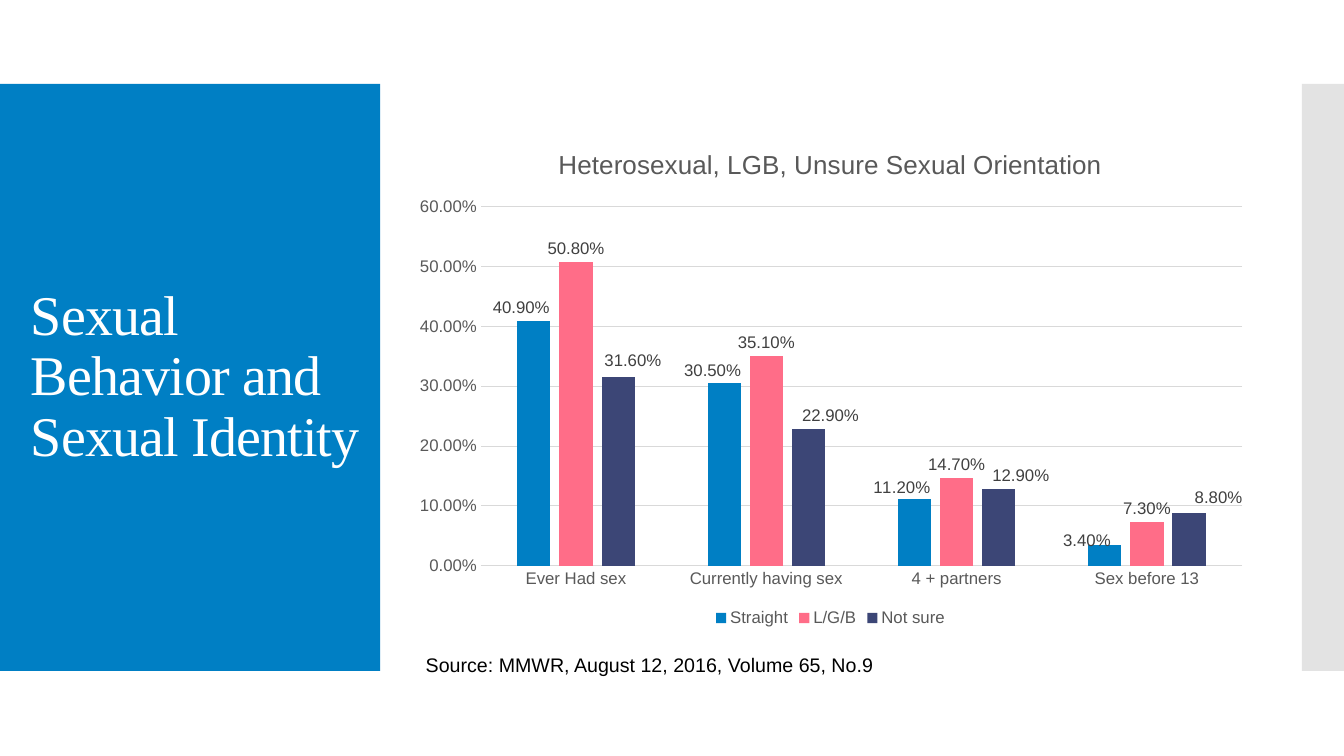
from dataclasses import dataclass

from lxml.etree import SubElement
from pptx import Presentation
from pptx.chart.data import CategoryChartData
from pptx.dml.color import RGBColor
from pptx.enum.chart import XL_CHART_TYPE as ChartType
from pptx.enum.chart import XL_LABEL_POSITION as LabelPosition
from pptx.enum.chart import XL_LEGEND_POSITION as LegendPosition
from pptx.enum.chart import XL_TICK_MARK as TickMark
from pptx.enum.shapes import MSO_SHAPE as Shape
from pptx.enum.text import MSO_ANCHOR as Anchor
from pptx.enum.text import MSO_AUTO_SIZE as AutoSize
from pptx.oxml import parse_xml
from pptx.oxml.ns import nsdecls, qn
from pptx.util import Pt

EMU_PER_PX = 9525  # 96 px to the inch


@dataclass(frozen=True)
class Theme:
    blue: str = "007FC4"
    pink: str = "FF6D88"
    navy: str = "3C4676"
    band: str = "C8C8C8"
    white: str = "FFFFFF"
    black: str = "000000"
    axis_text: str = "595959"
    label_text: str = "404040"
    grid: str = "D9D9D9"
    serif: str = "Times New Roman"
    sans: str = "Arial"
    title_size: float = 40
    chart_title_size: float = 18.6
    source_size: float = 14
    chart_size: float = 12


class SlideBuilder:
    def __init__(self, page, theme):
        self.page = page
        self.theme = theme

    def px(self, *lengths):
        return [length * EMU_PER_PX for length in lengths]

    def set_font(self, font, size, color, name=None):
        font.name = name or self.theme.sans
        font.size = Pt(size)
        font.bold = False
        font.color.rgb = RGBColor.from_string(color)

    def set_line(self, line, color):
        line.color.rgb = RGBColor.from_string(color)
        line.width = Pt(0.75)

    def panel(self, bounds, color, opacity=100):
        box = self.page.shapes.add_shape(Shape.RECTANGLE, *self.px(*bounds))
        box.shadow.inherit = False
        box.line.fill.background()
        box.fill.solid()
        box.fill.fore_color.rgb = RGBColor.from_string(color)
        if opacity < 100:
            fill_color = box.fill._xPr.find(".//" + qn("a:srgbClr"))
            SubElement(fill_color, qn("a:alpha"), val=str(opacity * 1000))

    def text(self, bounds, words, size, color, font_name, anchor=Anchor.TOP,
             line_spacing=None, tracking=None, grow=False):
        box = self.page.shapes.add_textbox(*self.px(*bounds))
        frame = box.text_frame
        frame.word_wrap = True
        frame.vertical_anchor = anchor
        if grow:
            frame.auto_size = AutoSize.SHAPE_TO_FIT_TEXT
        para = frame.paragraphs[0]
        span = para.add_run()
        span.text = words
        self.set_font(para.font, size, color, font_name)
        para.line_spacing = line_spacing
        if tracking:
            span._r.get_or_add_rPr().set("spc", str(tracking))

    def column_chart(self, bounds, plot_bounds, title, categories, series_rows):
        theme = self.theme
        data = CategoryChartData(number_format="0.00%")
        data.categories = categories
        for name, values, *_ in series_rows:
            data.add_series(name, values)
        chart = self.page.shapes.add_chart(
            ChartType.COLUMN_CLUSTERED, *self.px(*bounds), data).chart
        self.set_font(chart.font, theme.chart_size, theme.axis_text)

        # Title and legend
        chart.has_title = True
        para = chart.chart_title.text_frame.paragraphs[0]
        para.text = title
        self.set_font(para.font, theme.chart_title_size, theme.axis_text)
        chart.has_legend = True
        chart.legend.position = LegendPosition.BOTTOM
        chart.legend.include_in_layout = False
        self.set_font(chart.legend.font, theme.chart_size, theme.axis_text)

        # Axes
        for axis in (chart.category_axis, chart.value_axis):
            axis.major_tick_mark = axis.minor_tick_mark = TickMark.NONE
            self.set_font(axis.tick_labels.font, theme.chart_size, theme.axis_text)
        self.set_line(chart.category_axis.format.line, theme.grid)
        values_axis = chart.value_axis
        values_axis.format.line.fill.background()
        values_axis.minimum_scale, values_axis.maximum_scale = 0, 0.6
        values_axis.major_unit = 0.1
        values_axis.tick_labels.number_format = "0.00%"
        values_axis.tick_labels.number_format_is_linked = False
        self.set_line(values_axis.major_gridlines.format.line, theme.grid)

        # Columns and their labels
        plot = chart.plots[0]
        plot.gap_width, plot.overlap = 219, -27
        plot.vary_by_categories = False
        size = bounds[2:]
        for series, (_, _, color, shifts) in zip(plot.series, series_rows):
            series.format.fill.solid()
            series.format.fill.fore_color.rgb = RGBColor.from_string(color)
            labels = series.data_labels
            labels.show_value = True
            labels.position = LabelPosition.OUTSIDE_END
            labels.number_format = "0.00%"
            labels.number_format_is_linked = False
            self.set_font(labels.font, theme.chart_size, theme.label_text)
            for index, shift in enumerate(shifts):
                label = series.points[index].data_label
                label.position = LabelPosition.OUTSIDE_END
                self.set_font(label.font, theme.chart_size, theme.label_text)
            for element, shift in zip(labels._element.findall(qn("c:dLbl")), shifts):
                element.find(qn("c:idx")).addnext(self.layout(shift, size))

        # Plot area
        area = chart._chartSpace.find(".//" + qn("c:plotArea"))
        for old_layout in area.findall(qn("c:layout")):
            area.remove(old_layout)
        area.insert(0, self.layout(plot_bounds, size, inner=True))

    def layout(self, lengths, size, inner=False):
        tags = []
        if inner:
            tags = ['<c:layoutTarget val="inner"/>',
                    '<c:xMode val="edge"/>', '<c:yMode val="edge"/>']
        for tag, length, whole in zip("xywh", lengths, (*size, *size)):
            tags.append(f'<c:{tag} val="{length / whole:.4f}"/>')
        return parse_xml(f'<c:layout {nsdecls("c")}><c:manualLayout>'
                         f'{"".join(tags)}</c:manualLayout></c:layout>')


def main():
    theme = Theme()
    deck = Presentation()
    deck.slide_width, deck.slide_height = 1280 * EMU_PER_PX, 720 * EMU_PER_PX
    page = deck.slides.add_slide(deck.slide_layouts[6])
    builder = SlideBuilder(page, theme)

    # Side panels
    builder.panel((0, 80, 362, 559), theme.blue)
    builder.panel((1240, 80, 40, 559), theme.band, opacity=50)

    # Slide title
    builder.text((20, 118, 338, 483), "Sexual Behavior and Sexual Identity",
                 theme.title_size, theme.white, theme.serif,
                 anchor=Anchor.MIDDLE, line_spacing=0.9, tracking=-60)

    # Chart: name, values, colour, label shifts in px
    builder.column_chart(
        (383, 121, 816, 480), (75, 76, 725, 342),
        "Heterosexual, LGB, Unsure Sexual Orientation",
        ["Ever Had sex", "Currently having sex", "4 + partners", "Sex before 13"],
        [("Straight", (0.409, 0.305, 0.112, 0.034), theme.blue,
          ((-12, 0), (-11, 0), (-12, 2), (-17, 8))),
         ("L/G/B", (0.508, 0.351, 0.147, 0.073), theme.pink, ()),
         ("Not sure", (0.316, 0.229, 0.129, 0.088), theme.navy,
          ((14, -3), (21, 0), (21, 0), (28, -2)))])

    # Source line
    builder.text((396, 617, 584, 33), "Source: MMWR, August 12, 2016, Volume 65, No.9",
                 theme.source_size, theme.black, theme.sans, grow=True)

    deck.save("out.pptx")


if __name__ == "__main__":
    main()
